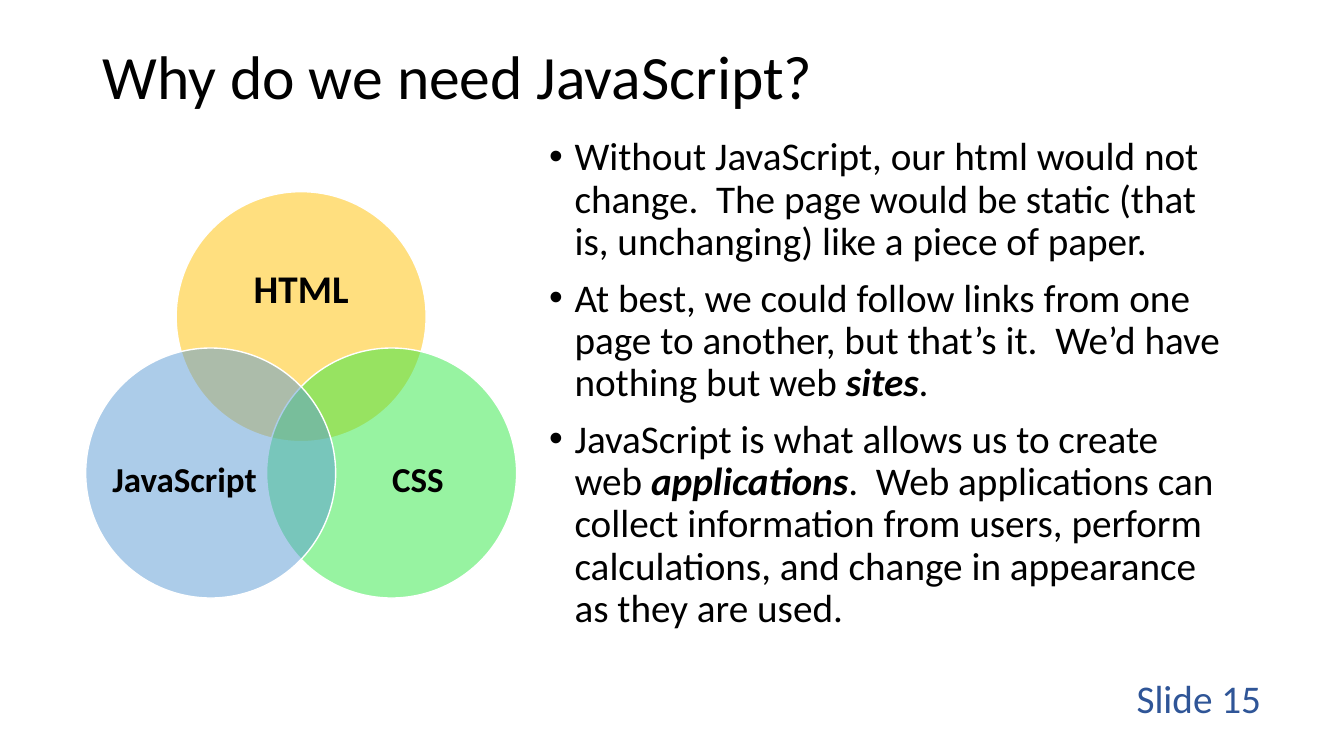
from dataclasses import dataclass

from lxml import etree
from pptx import Presentation
from pptx.dml.color import RGBColor
from pptx.enum.shapes import MSO_SHAPE
from pptx.enum.text import MSO_ANCHOR, MSO_AUTO_SIZE, PP_ALIGN
from pptx.oxml.ns import qn
from pptx.util import Cm, Pt

OVAL = MSO_SHAPE.OVAL
TOP, MIDDLE = MSO_ANCHOR.TOP, MSO_ANCHOR.MIDDLE
LEFT, CENTER, RIGHT = PP_ALIGN.LEFT, PP_ALIGN.CENTER, PP_ALIGN.RIGHT
NO_AUTOFIT = MSO_AUTO_SIZE.NONE
TITLE_ONLY = 5


@dataclass(frozen=True)
class Theme:
    font: str = "Calibri"
    text: str = "000000"
    footer: str = "2F5597"
    outline: str = "FFFFFF"
    html: str = "FFC000"
    css: str = "30E845"
    javascript: str = "5B9BD5"
    title_size: int = 44
    body_size: int = 28
    label_size: int = 25


THEME = Theme()

# Venn geometry in centimetres
DIAMETER = 6.3
HTML_CENTER = (7.59, 7.98)
SIDE_SHIFT = 2.28
SIDE_DROP = 3.94

# Each point is a list of (text, emphasised) runs
POINTS = [
    [("Without JavaScript, our html would not change.  The page would be "
      "static (that is, unchanging) like a piece of paper.", False)],
    [("At best, we could follow links from one page to another, but that’s "
      "it.  We’d have nothing but web ", False),
     ("sites", True), (".", False)],
    [("JavaScript is what allows us to create web ", False),
     ("applications", True),
     (".  Web applications can collect information from users, perform "
      "calculations, and change in appearance as they are used.", False)],
]


def add_run(paragraph, text, size, color=THEME.text, bold=False, italic=False):
    run = paragraph.add_run()
    run.text = text
    font = run.font
    font.name, font.size = THEME.font, Pt(size)
    font.bold, font.italic = bold, italic
    font.color.rgb = RGBColor.from_string(color)


def set_frame(frame, anchor, inset=None):
    frame.word_wrap = True
    frame.auto_size = NO_AUTOFIT
    frame.vertical_anchor = anchor
    if inset is not None:
        frame.margin_left = frame.margin_right = inset
        frame.margin_top = frame.margin_bottom = inset


def add_text_box(shapes, left, top, width, height, anchor, inset=None):
    box = shapes.add_textbox(Cm(left), Cm(top), Cm(width), Cm(height))
    set_frame(box.text_frame, anchor, inset)
    return box.text_frame


def set_bullet(paragraph, indent):
    properties = paragraph._p.get_or_add_pPr()
    properties.set("marL", str(indent))
    properties.set("indent", str(-indent))
    etree.SubElement(properties, qn("a:buFont"), typeface="Arial")
    etree.SubElement(properties, qn("a:buChar"), char="•")


def add_title(slide, text):
    title = slide.shapes.title
    title.left, title.top = Cm(2.33), Cm(1.02)
    title.width, title.height = Cm(29.21), Cm(1.98)
    set_frame(title.text_frame, MIDDLE)
    paragraph = title.text_frame.paragraphs[0]
    paragraph.alignment = LEFT
    paragraph.line_spacing = 0.9
    add_run(paragraph, text, THEME.title_size)


def add_points(slide, points):
    frame = add_text_box(slide.shapes, 13.59, 3.33, 17.45, 13.74, TOP)
    for index, runs in enumerate(points):
        paragraph = frame.add_paragraph() if index else frame.paragraphs[0]
        paragraph.line_spacing = 0.9
        paragraph.space_before = Pt(10)
        set_bullet(paragraph, Cm(0.64))
        for text, emphasised in runs:
            add_run(paragraph, text, THEME.body_size,
                    bold=emphasised, italic=emphasised)


def add_circle(shapes, center_x, center_y, color):
    circle = shapes.add_shape(OVAL, Cm(center_x - DIAMETER / 2),
                              Cm(center_y - DIAMETER / 2),
                              Cm(DIAMETER), Cm(DIAMETER))
    circle.shadow.inherit = False
    circle.fill.solid()
    circle.fill.fore_color.rgb = RGBColor.from_string(color)
    color_element = circle._element.spPr.find(qn("a:solidFill"))[0]
    etree.SubElement(color_element, qn("a:alpha"), val="50000")
    circle.line.color.rgb = RGBColor.from_string(THEME.outline)
    circle.line.width = Pt(1)


def add_label(shapes, center_x, center_y, width, height, text, size):
    frame = add_text_box(shapes, center_x - width / 2, center_y - height / 2,
                         width, height, MIDDLE, inset=0)
    paragraph = frame.paragraphs[0]
    paragraph.alignment = CENTER
    paragraph.line_spacing = 0.9
    add_run(paragraph, text, size, bold=True)


def add_venn(slide):
    venn = slide.shapes.add_group_shape().shapes
    x, y = HTML_CENTER
    add_circle(venn, x, y, THEME.html)
    add_label(venn, x, y - 0.64, 4.62, 2.84, "HTML", THEME.body_size)
    # The lower circles mirror each other, labels pushed outwards
    for side, text, color in ((1, "CSS", THEME.css),
                              (-1, "JavaScript", THEME.javascript)):
        side_x, side_y = x + side * SIDE_SHIFT, y + SIDE_DROP
        add_circle(venn, side_x, side_y, color)
        add_label(venn, side_x + side * 0.66, side_y + 0.2, 3.78, 3.45,
                  text, THEME.label_size)


def add_slide_number(slide, text):
    frame = add_text_box(slide.shapes, 24.41, 17.07, 7.62, 1.02, MIDDLE)
    paragraph = frame.paragraphs[0]
    paragraph.alignment = RIGHT
    add_run(paragraph, text, THEME.body_size, THEME.footer)


def main():
    deck = Presentation()
    deck.slide_width, deck.slide_height = Cm(33.87), Cm(19.05)
    slide = deck.slides.add_slide(deck.slide_layouts[TITLE_ONLY])
    add_title(slide, "Why do we need JavaScript?")
    add_points(slide, POINTS)
    add_venn(slide)
    add_slide_number(slide, "Slide 15")
    deck.save("out.pptx")


if __name__ == "__main__":
    main()
